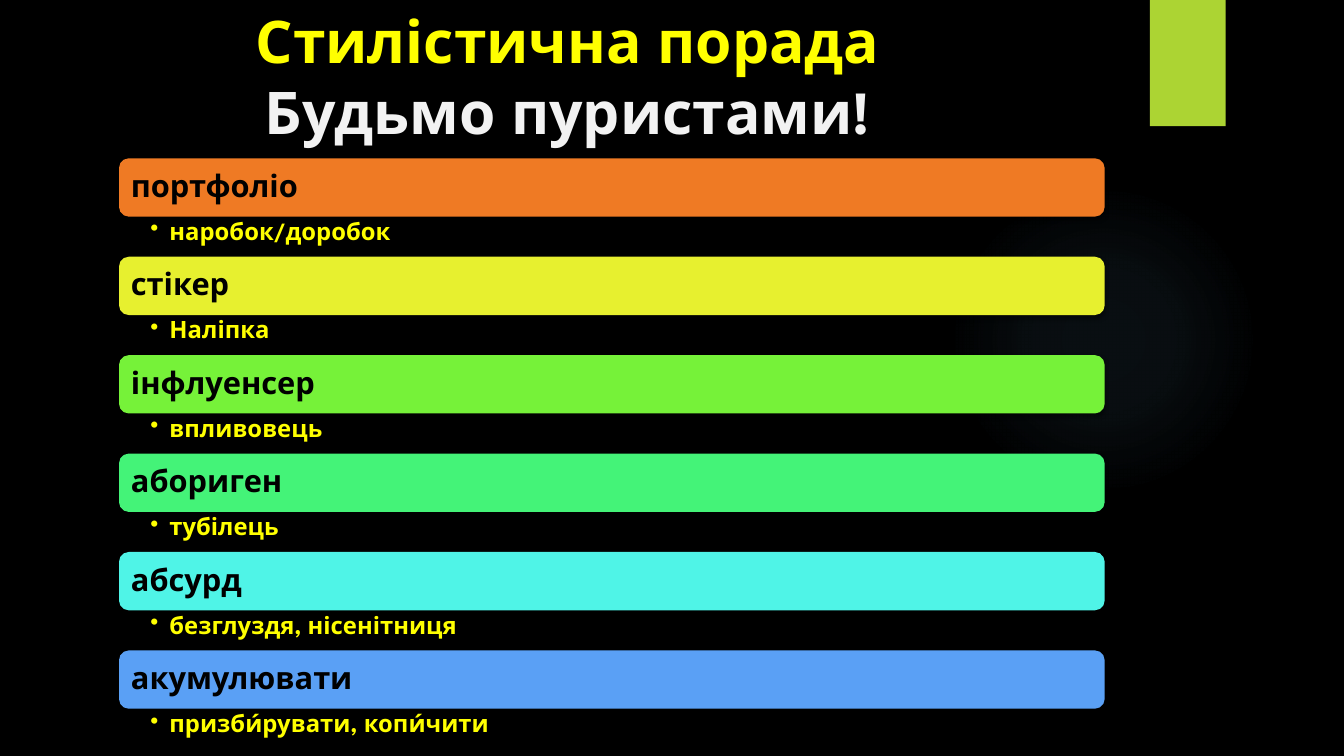
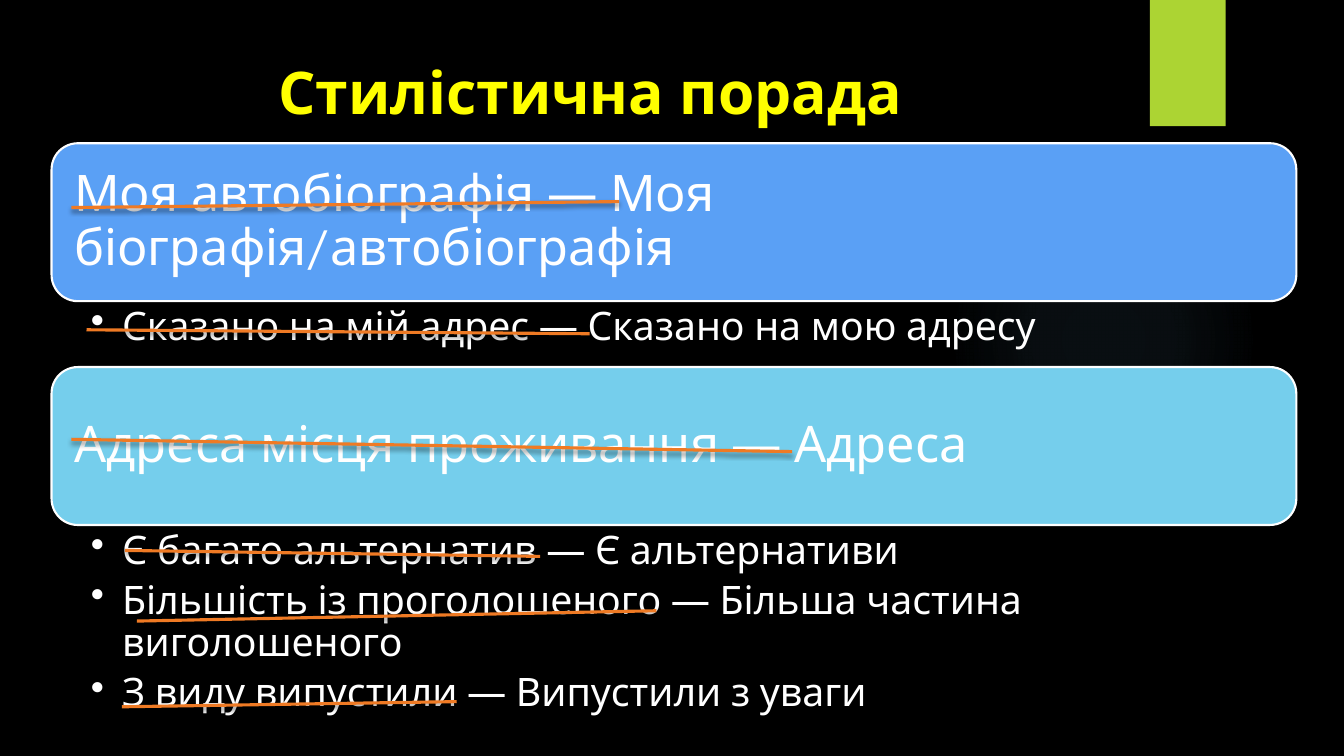
"""Build two Ukrainian style-advice slides with word lists and struck-out phrases."""
from lxml import etree
from pptx import Presentation
from pptx.dml.color import RGBColor
from pptx.enum import shapes, text
from pptx.oxml import ns, parse_xml
from pptx.util import Cm, Pt

FONT = "League Spartan"
COLORS = {
    "black": "000000", "white": "FFFFFF", "soft_white": "F2F2F2",
    "yellow": "FFFF00", "lime": "ACD433", "orange": "EF7A24",
    "lemon": "E7F02F", "green": "76F239", "mint": "44F378",
    "aqua": "4FF4E7", "blue": "5AA0F5", "sky": "75CEEC", "glow": "7AC4F0",
}
ADVICE = "Стилістична порада"
PURISM_TITLE = [(ADVICE, "yellow"), ("Будьмо пуристами!", "soft_white")]
PHRASES_TITLE = [(ADVICE, "yellow")]

LOANWORDS = [
    ("портфоліо", "orange", ["наробок/доробок"], 1.01),
    ("стікер", "lemon", ["Наліпка"], 1.01),
    ("інфлуенсер", "green", ["впливовець"], 1.01),
    ("абориген", "mint", ["тубілець"], 1.01),
    ("абсурд", "aqua", ["безглуздя, нісенітниця"], 1.01),
    ("акумулювати", "blue", ["призби́рувати, копи́чити"], 1.01),
]
PHRASES = [
    ("Моя автобіографія ― Моя біографія/автобіографія", "blue",
     ["Сказано на мій адрес ― Сказано на мою адресу"], 1.66),
    ("Адреса місця проживання ― Адреса", "sky",
     ["Є багато альтернатив ― Є альтернативи",
      "Більшість із проголошеного ― Більша частина виголошеного",
      "З виду випустили ― Випустили з уваги"], 5.18),
]
STRIKES = [
    (1.8, 5.23, 15.6, 5.08), (2.18, 8.31, 14.86, 8.41),
    (1.8, 11.07, 19.96, 11.38), (3.15, 13.87, 13.61, 14.02),
    (3.45, 15.65, 16.54, 15.39), (3.07, 17.81, 11.51, 17.68),
]
LOANWORD_STYLE = dict(
    left=3, top=3.99, width=24.84, bar_height=1.47, bar_inset=0.23,
    bar_size=22, bar_color="black", bold=True, outlined=False,
    item_size=17, item_color="yellow", item_insets=(0.79, 0.08, 0.43, 0.08),
    indent=0.48)
PHRASE_STYLE = dict(
    left=1.3, top=3.61, width=31.37, bar_height=3.98, bar_inset=0.38,
    bar_size=36, bar_color="white", bold=False, outlined=True,
    item_size=28, item_color="white", item_insets=(0.99, 0.13, 0.71, 0.13),
    indent=0.79)


def rgb(name):
    return RGBColor.from_string(COLORS[name])


def add_run(paragraph, words, size, color, bold):
    run = paragraph.add_run()
    run.text = words
    run.font.name, run.font.size, run.font.bold = FONT, Pt(size), bold
    run.font.color.rgb = rgb(color)


def set_frame(frame, insets, anchor):
    frame.word_wrap = True
    frame.vertical_anchor = anchor
    (frame.margin_left, frame.margin_top,
     frame.margin_right, frame.margin_bottom) = map(Cm, insets)


def add_shadow(shape):
    properties = shape.element.spPr
    effects = properties.find(ns.qn("a:effectLst"))
    if effects is None:
        effects = etree.SubElement(properties, ns.qn("a:effectLst"))
    effects.append(parse_xml(
        f'<a:outerShdw {ns.nsdecls("a")} blurRad="38100" dist="25400" '
        'dir="5400000" rotWithShape="0"><a:srgbClr val="000000">'
        '<a:alpha val="45000"/></a:srgbClr></a:outerShdw>'))


def add_filled(slide, kind, box, color):
    shape = slide.shapes.add_shape(kind, *map(Cm, box))
    shape.shadow.inherit = False
    shape.fill.solid()
    shape.fill.fore_color.rgb = rgb(color)
    shape.line.fill.background()
    return shape


def add_glow(slide):
    glow = add_filled(slide, shapes.MSO_SHAPE.OVAL, (23.9, 4.65, 7.82, 7.82), "glow")
    stops = "".join(
        f'<a:gs pos="{place}000"><a:srgbClr val="{COLORS["glow"]}">'
        f'<a:alpha val="{alpha}000"/></a:srgbClr></a:gs>'
        for place, alpha in [(0, 7), (36, 6), (69, 0)])
    gradient = parse_xml(
        f'<a:gradFill {ns.nsdecls("a")} rotWithShape="1"><a:gsLst>{stops}</a:gsLst>'
        '<a:path path="circle"><a:fillToRect l="50000" t="50000" r="50000" '
        'b="50000"/></a:path></a:gradFill>')
    properties = glow.element.spPr
    properties.replace(properties.find(ns.qn("a:solidFill")), gradient)


def add_advice_slide(prs, title_lines, title_box):
    slide = prs.slides.add_slide(prs.slide_layouts[6])
    add_glow(slide)
    add_shadow(add_filled(slide, shapes.MSO_SHAPE.RECTANGLE,
                          (28.98, 0, 1.91, 3.18), "lime"))
    title = slide.shapes.add_textbox(*map(Cm, title_box)).text_frame
    set_frame(title, (0.25, 0.13, 0.25, 0.13), text.MSO_ANCHOR.TOP)
    heading = title.paragraphs[0]
    heading.alignment = text.PP_ALIGN.CENTER
    for index, (words, color) in enumerate(title_lines):
        if index:
            heading.add_line_break()
        add_run(heading, words, 42, color, True)
    return slide


def add_bullet(paragraph, indent):
    paragraph.level = 1
    properties = paragraph._p.get_or_add_pPr()
    properties.set("marL", str(Cm(indent)))
    properties.set("indent", str(-Cm(indent)))
    etree.SubElement(properties, ns.qn("a:buChar")).set("char", "•")


def add_sections(slide, sections, style):
    left, top, width = style["left"], style["top"], style["width"]
    for heading, color, items, items_height in sections:
        bar = add_filled(slide, shapes.MSO_SHAPE.ROUNDED_RECTANGLE,
                         (left, top, width, style["bar_height"]), color)
        if style["outlined"]:
            bar.line.color.rgb = rgb("white")
            bar.line.width = Pt(1.5)
        else:
            add_shadow(bar)
        set_frame(bar.text_frame, [style["bar_inset"]] * 4, text.MSO_ANCHOR.MIDDLE)
        label = bar.text_frame.paragraphs[0]
        label.alignment = text.PP_ALIGN.LEFT
        label.line_spacing = 0.9
        add_run(label, heading, style["bar_size"], style["bar_color"], style["bold"])
        top += style["bar_height"]

        frame = slide.shapes.add_textbox(*map(Cm, (left, top, width, items_height))).text_frame
        set_frame(frame, style["item_insets"], text.MSO_ANCHOR.TOP)
        for index, words in enumerate(items):
            item = frame.add_paragraph() if index else frame.paragraphs[0]
            add_bullet(item, style["indent"])
            item.line_spacing = 0.9
            item.space_after = Pt(style["item_size"] * 0.2)
            add_run(item, words, style["item_size"], style["item_color"], style["bold"])
        top += items_height


def add_strike(slide, ends):
    strike = slide.shapes.add_connector(shapes.MSO_CONNECTOR.STRAIGHT, *map(Cm, ends))
    strike.line.color.rgb = rgb("orange")
    strike.line.width = Pt(2.25)
    add_shadow(strike)


def main():
    prs = Presentation()
    prs.slide_width, prs.slide_height = Cm(33.87), Cm(19.05)
    backdrop = prs.slide_master.background.fill
    backdrop.solid()
    backdrop.fore_color.rgb = rgb("black")

    purism = add_advice_slide(prs, PURISM_TITLE, (-0.58, 0, 29.77, 2.72))
    add_sections(purism, LOANWORDS, LOANWORD_STYLE)

    phrases = add_advice_slide(prs, PHRASES_TITLE, (1.8, 1.27, 26.14, 2.29))
    add_sections(phrases, PHRASES, PHRASE_STYLE)
    for ends in STRIKES:
        add_strike(phrases, ends)
    prs.save("out.pptx")


if __name__ == "__main__":
    main()
